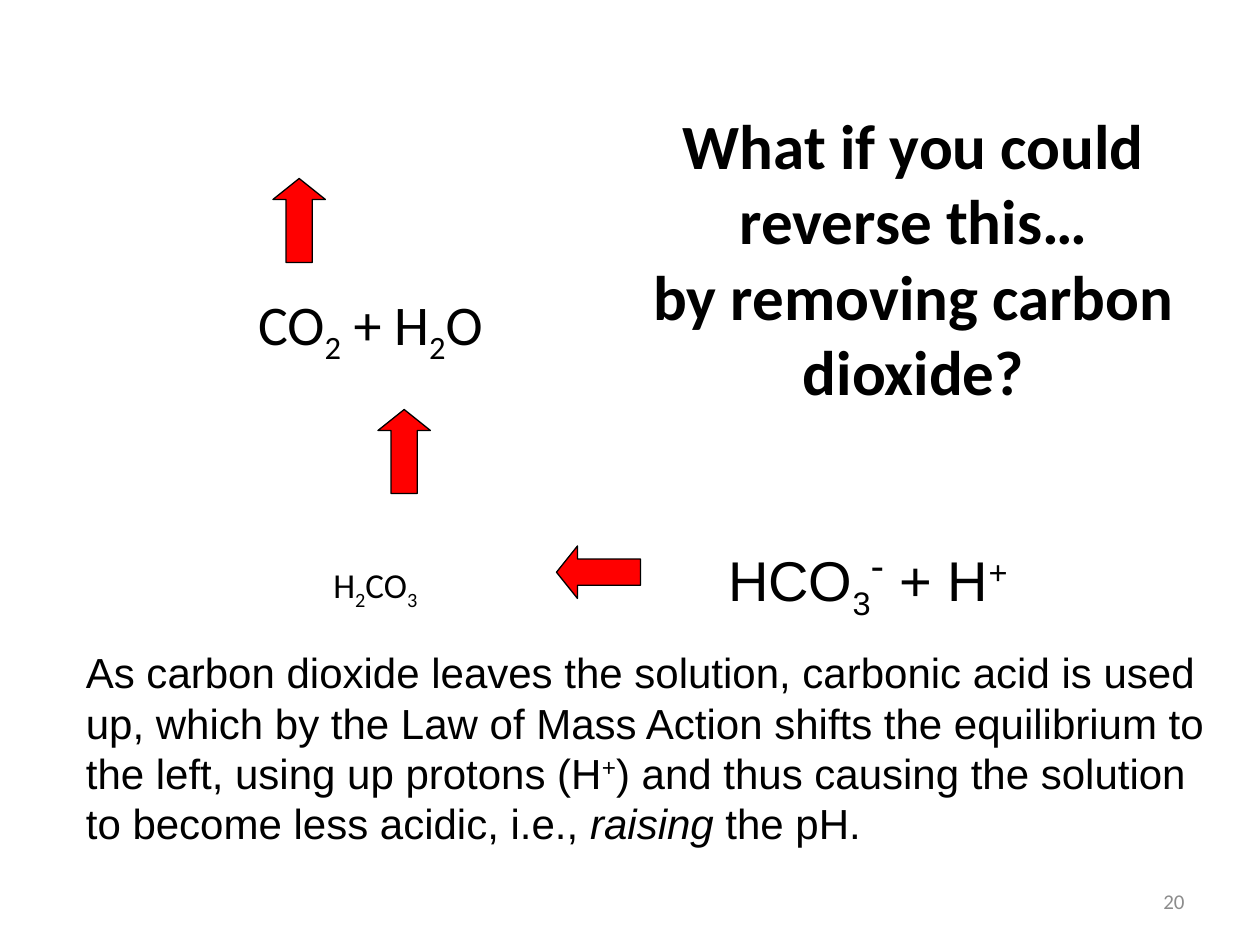
from pptx import Presentation
from pptx.dml.color import RGBColor
from pptx.enum.shapes import MSO_SHAPE
from pptx.enum.text import MSO_ANCHOR, PP_ALIGN
from pptx.util import Pt

UP, LEFT = MSO_SHAPE.UP_ARROW, MSO_SHAPE.LEFT_ARROW
MIDDLE, TOP = MSO_ANCHOR.MIDDLE, MSO_ANCHOR.TOP
CENTER, RIGHT = PP_ALIGN.CENTER, PP_ALIGN.RIGHT
SUB, SUPER = -25000, 30000
BLACK, GRAY, RED = "000000", "8C8C8C", "FF0000"


def color(value):
    return RGBColor.from_string(value)


def format_run(span, font, size, hue=BLACK, bold=False):
    span.font.name = font
    span.font.size = Pt(size)
    span.font.color.rgb = color(hue)
    span.font.bold = bold


def add_runs(para, pieces, font, size, hue=BLACK):
    """Each piece is a text and its baseline shift in 1/1000 percent."""
    for text, shift in pieces:
        span = para.add_run()
        span.text = text
        format_run(span, font, size, hue)
        if shift:
            span.font._element.set("baseline", str(shift))


def add_text_box(page, box, anchor=TOP):
    shape = page.shapes.add_textbox(*map(Pt, box))
    frame = shape.text_frame
    frame.word_wrap = True
    frame.vertical_anchor = anchor
    return frame


def place_title(page, box):
    title = page.shapes.title
    title.left, title.top, title.width, title.height = map(Pt, box)
    frame = title.text_frame
    frame.text = "What if you could reverse this…\vby removing carbon dioxide?"
    frame.vertical_anchor = MIDDLE
    para = frame.paragraphs[0]
    para.alignment = CENTER
    for span in para.runs:
        format_run(span, "Calibri", 36, bold=True)


def add_left_formulas(page, box):
    """Carbon dioxide and water above, carbonic acid below."""
    frame = add_text_box(page, box)
    add_runs(frame.paragraphs[0],
             [("CO", 0), ("2", SUB), (" + H", 0), ("2", SUB), ("O", 0)],
             "Calibri", 32)
    acid = frame.add_paragraph()
    acid.space_before = Pt(113)
    acid._p.get_or_add_pPr().set("marL", str(Pt(43)))
    add_runs(acid, [("H", 0), ("2", SUB), ("CO", 0), ("3", SUB)], "Calibri", 20)


def add_ion_formula(page, box):
    para = add_text_box(page, box).paragraphs[0]
    para.space_before = Pt(6.4)
    para._p.get_or_add_pPr().set("marL", str(Pt(44)))
    add_runs(para, [("HCO", 0), ("3", SUB)], "Arial", 32)
    add_runs(para, [("-", SUPER)], "Arial", 40)
    add_runs(para, [(" + H", 0), ("+", SUPER)], "Arial", 32)


def add_explanation(page, box):
    para = add_text_box(page, box).paragraphs[0]
    add_runs(para, [
        ("As carbon dioxide leaves the solution, carbonic acid is used up, "
         "which by the Law of Mass Action shifts the equilibrium to the left, "
         "using up protons (H", 0),
        ("+", SUPER),
        (") and thus causing the solution to become less acidic, i.e., ", 0),
        ("raising", 0),
        (" the pH.", 0),
    ], "Arial", 24)
    para.runs[3].font.italic = True


def add_arrow(page, kind, box):
    arrow = page.shapes.add_shape(kind, *map(Pt, box))
    arrow.shadow.inherit = False
    arrow.adjustments[0], arrow.adjustments[1] = 0.5, 0.4
    arrow.fill.solid()
    arrow.fill.fore_color.rgb = color(RED)
    arrow.line.color.rgb = color(BLACK)
    arrow.line.width = Pt(0.75)


def add_page_number(page, box):
    para = add_text_box(page, box, MIDDLE).paragraphs[0]
    para.alignment = RIGHT
    add_runs(para, [("20", 0)], "Calibri", 12, GRAY)


def main():
    deck = Presentation()
    deck.slide_width, deck.slide_height = Pt(720), Pt(540)
    page = deck.slides.add_slide(deck.slide_layouts[5])

    place_title(page, (342, 111, 360, 72))
    add_left_formulas(page, (140.4, 162, 190, 186))
    add_ion_formula(page, (365, 300, 277, 84))
    add_explanation(page, (42, 366, 654, 122))
    add_page_number(page, (516, 500.5, 168, 28.8))

    # Arrows show the reaction running backwards
    for kind, box in (
        (UP, (216, 234, 30, 48)),
        (UP, (156, 102, 30, 48)),
        (LEFT, (318, 312, 48, 30)),
    ):
        add_arrow(page, kind, box)

    deck.save("out.pptx")


if __name__ == "__main__":
    main()
